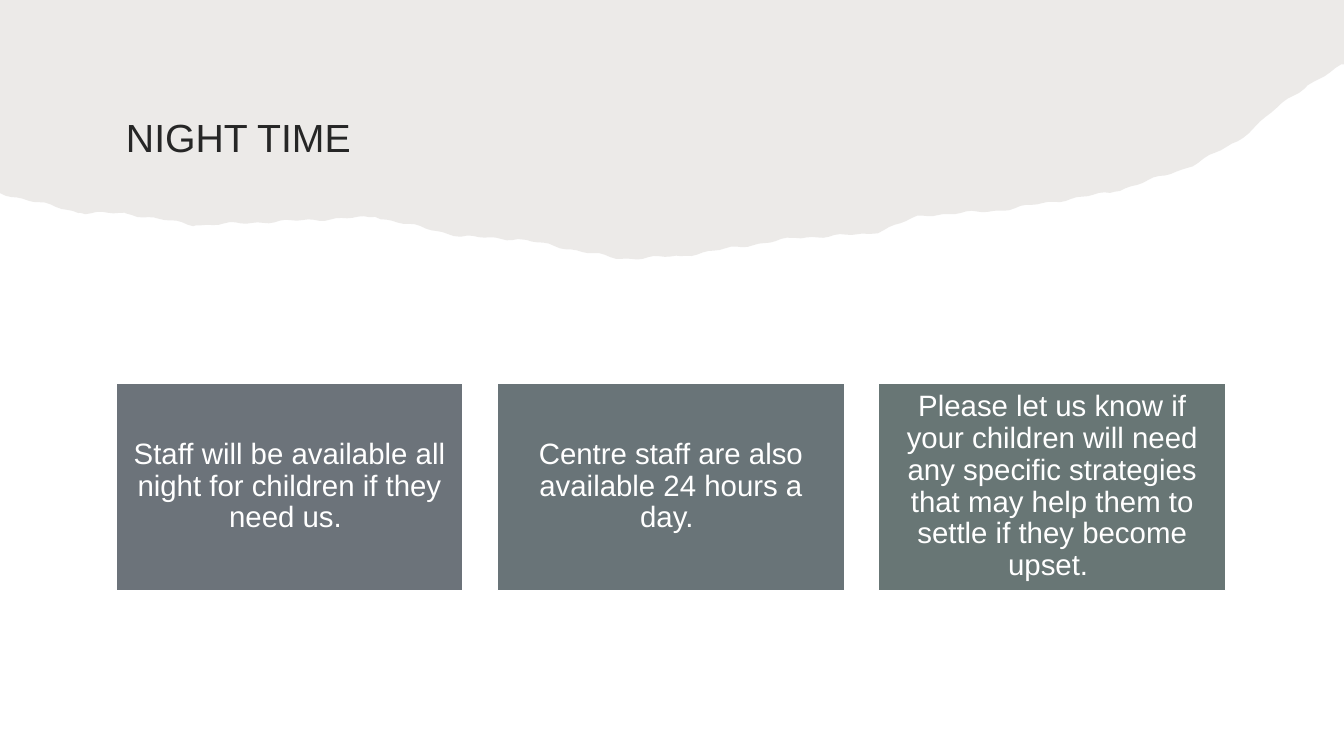
from itertools import pairwise
from math import sin

from lxml import etree
from pptx import Presentation
from pptx import util as u
from pptx.dml.color import RGBColor
from pptx.enum import shapes, text
from pptx.oxml.ns import qn

TAUPE = RGBColor(0x82, 0x76, 0x6A)
INK = RGBColor(0x26, 0x26, 0x26)
WHITE = RGBColor(0xFF, 0xFF, 0xFF)
SLATE = RGBColor(0x6C, 0x73, 0x7A)
STEEL = RGBColor(0x69, 0x74, 0x78)
SAGE = RGBColor(0x68, 0x76, 0x75)

TITLE = "NIGHT TIME"
CARDS = [
    ("Staff will be available all night for children if they need us.", SLATE),
    ("Centre staff are also available 24 hours a day.", STEEL),
    ("Please let us know if your children will need any specific strategies "
     "that may help them to settle if they become upset.", SAGE),
]
NO_BREAK_SPACE = chr(160)  # ends each card's sentence and affects its wrapping

SLIDE_W, SLIDE_H = 960, 540
LEFT = 82.8
TITLE_BOX = (LEFT, 48, 772.5, 96)
CARD_TOP, CARD_W, CARD_H, CARD_STEP = 273.6, 248, 148, 272.4

# Bends of the torn edge (x, y); the paper between them is straight but rough
BENDS = [(0, 138), (57, 152), (90, 152.5), (140, 161), (268, 155),
         (330, 169), (372, 171), (443, 185), (486, 183), (568, 170),
         (623, 167), (658, 154), (713, 150.5), (796, 137), (848, 120),
         (884, 101), (912, 77), (934, 61), (960, 46)]
TEAR_STEP = 4
ROUGHNESS = 0.6


def set_all(obj, **values):
    for name, value in values.items():
        setattr(obj, name, value)


def paint(sp, color):
    sp.shadow.inherit = False
    sp.fill.solid()
    sp.fill.fore_color.rgb = color


def write(sp, words, size, color, align, spacing, inset_x, inset_y):
    tf = sp.text_frame
    tf.text = words
    set_all(tf, word_wrap=True, auto_size=text.MSO_AUTO_SIZE.NONE,
            vertical_anchor=text.MSO_ANCHOR.MIDDLE,
            margin_left=u.Pt(inset_x), margin_right=u.Pt(inset_x),
            margin_top=u.Pt(inset_y), margin_bottom=u.Pt(inset_y))
    p = tf.paragraphs[0]
    set_all(p, alignment=align, line_spacing=spacing)
    font = p.runs[0].font
    set_all(font, name="Arial", size=u.Pt(size))
    font.color.rgb = color


def torn_edge():
    """Join the bends by short steps, each shifted by a small ripple."""
    points = [BENDS[0]]
    for (x0, y0), (x1, y1) in pairwise(BENDS):
        for x in range(x0 + TEAR_STEP, x1, TEAR_STEP):
            y = y0 + (y1 - y0) * (x - x0) / (x1 - x0)
            ripple = ROUGHNESS * (sin(x / 3) + sin(x / 7))
            points.append((x, y + ripple))
        points.append((x1, y1))
    return points


def add_torn_band(s):
    builder = s.shapes.build_freeform(0, 0, scale=1.0)
    outline = torn_edge() + [(SLIDE_W, 0)]
    builder.add_line_segments([(u.Pt(x), u.Pt(y)) for x, y in outline])
    sp = builder.convert_to_shape()
    paint(sp, TAUPE)
    sp.line.fill.background()
    color = sp.fill._xPr.find(qn("a:solidFill"))[0]
    etree.SubElement(color, qn("a:alpha")).set("val", "15000")
    # The band lies behind the title
    s.shapes.title._element.addprevious(sp._element)


def add_title(s):
    sp = s.shapes.title
    left, top, width, height = map(u.Pt, TITLE_BOX)
    set_all(sp, left=left, top=top, width=width, height=height)
    write(sp, TITLE, 28, INK, text.PP_ALIGN.LEFT, 1.1, 7.2, 3.6)


def add_card(s, i, words, color):
    box = (LEFT + i * CARD_STEP, CARD_TOP, CARD_W, CARD_H)
    sp = s.shapes.add_shape(shapes.MSO_SHAPE.RECTANGLE, *map(u.Pt, box))
    paint(sp, color)
    sp.line.color.rgb = WHITE
    sp.line.width = u.Pt(1)
    write(sp, words + NO_BREAK_SPACE, 21, WHITE, text.PP_ALIGN.CENTER,
          0.9, 6.5, 6.5)


def main():
    prs = Presentation()
    set_all(prs, slide_width=u.Pt(SLIDE_W), slide_height=u.Pt(SLIDE_H))
    s = prs.slides.add_slide(prs.slide_layouts[5])
    add_torn_band(s)
    add_title(s)
    for i, (words, color) in enumerate(CARDS):
        add_card(s, i, words, color)
    prs.save("out.pptx")


if __name__ == "__main__":
    main()
